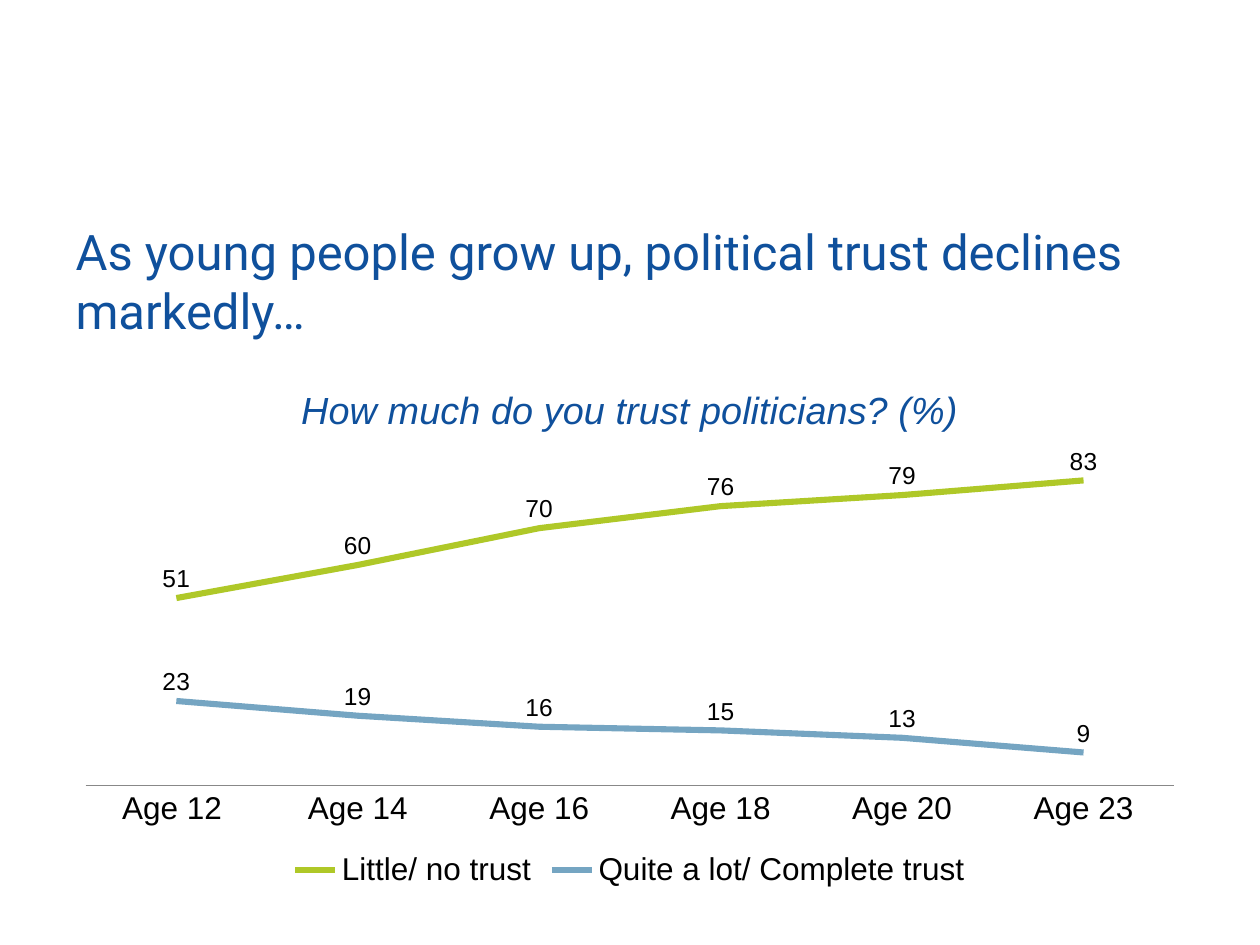
from pptx import Presentation
from pptx.chart.data import CategoryChartData
from pptx.dml.color import RGBColor
from pptx.enum.chart import XL_CHART_TYPE as CHART, XL_LABEL_POSITION as LABEL
from pptx.enum.chart import XL_LEGEND_POSITION as LEGEND, XL_MARKER_STYLE as MARKER
from pptx.enum.chart import XL_TICK_MARK as TICK
from pptx.enum.text import MSO_ANCHOR, PP_ALIGN
from pptx.util import Pt

EMU_PER_PX = 914400 / 126
BLUE, BLACK, GREY = "0F509C", "000000", "888888"
AGES = ["Age 12 ", "Age 14", "Age 16", "Age 18", "Age 20", "Age 23"]
TRUST = [
    ("Little/ no trust", [51, 60, 70, 76, 79, 83], "AFC828"),
    ("Quite a lot/ Complete trust", [23, 19, 16, 15, 13, 9], "75A5C2"),
]


def px(n):
    return round(n * EMU_PER_PX)


def rgb(color):
    return RGBColor.from_string(color)


def style(font, size, color, name="Arial", italic=False):
    font.size, font.name = Pt(size), name
    font.bold, font.italic = False, italic
    font.color.rgb = rgb(color)


def add_title(slide, box, text):
    sp = slide.shapes.title
    sp.left, sp.top, sp.width, sp.height = map(px, box)
    tf = sp.text_frame
    tf.text = text
    tf.word_wrap = True
    tf.vertical_anchor = MSO_ANCHOR.MIDDLE
    p = tf.paragraphs[0]
    p.alignment = PP_ALIGN.LEFT
    style(p.runs[0].font, 28, BLUE, "Roboto")


def add_trust_chart(slide, box, title):
    data = CategoryChartData(number_format="0")
    data.categories = AGES
    for name, values, _ in TRUST:
        data.add_series(name, values)
    chart = slide.shapes.add_chart(CHART.LINE, *map(px, box), data).chart
    style(chart.font, 18, BLACK)

    # Chart title and legend
    tf = chart.chart_title.text_frame
    tf.text = title
    style(tf.paragraphs[0].runs[0].font, 21.6, BLUE, italic=True)
    chart.chart_title.include_in_layout = False
    chart.has_legend = True
    chart.legend.position = LEGEND.BOTTOM
    chart.legend.include_in_layout = False

    # Axes
    cat_axis, val_axis = chart.category_axis, chart.value_axis
    cat_axis.major_tick_mark = cat_axis.minor_tick_mark = TICK.NONE
    cat_axis.format.line.color.rgb = rgb(GREY)
    cat_axis.format.line.width = Pt(0.75)
    val_axis.minimum_scale, val_axis.maximum_scale = 0, 90
    val_axis.has_major_gridlines = False
    val_axis.visible = False

    # Lines with their values above
    plot = chart.plots[0]
    plot.vary_by_categories = False
    for series, (_, _, color) in zip(plot.series, TRUST):
        series.smooth = False
        series.marker.style = MARKER.NONE
        series.format.line.color.rgb = rgb(color)
        series.format.line.width = Pt(3.5)
        labels = series.data_labels
        labels.show_value = True
        labels.position = LABEL.ABOVE
        labels.number_format, labels.number_format_is_linked = "0", False
        style(labels.font, 14, BLACK)


def main():
    prs = Presentation()
    prs.slide_width, prs.slide_height = px(1260), px(945)
    slide = prs.slides.add_slide(prs.slide_layouts[5])
    add_title(slide, (63, 219, 1134, 123),
              "As young people grow up, political trust declines markedly…")
    add_trust_chart(slide, (63, 362, 1134, 532),
                    "How much do you trust politicians? (%)")
    prs.save("out.pptx")


if __name__ == "__main__":
    main()
